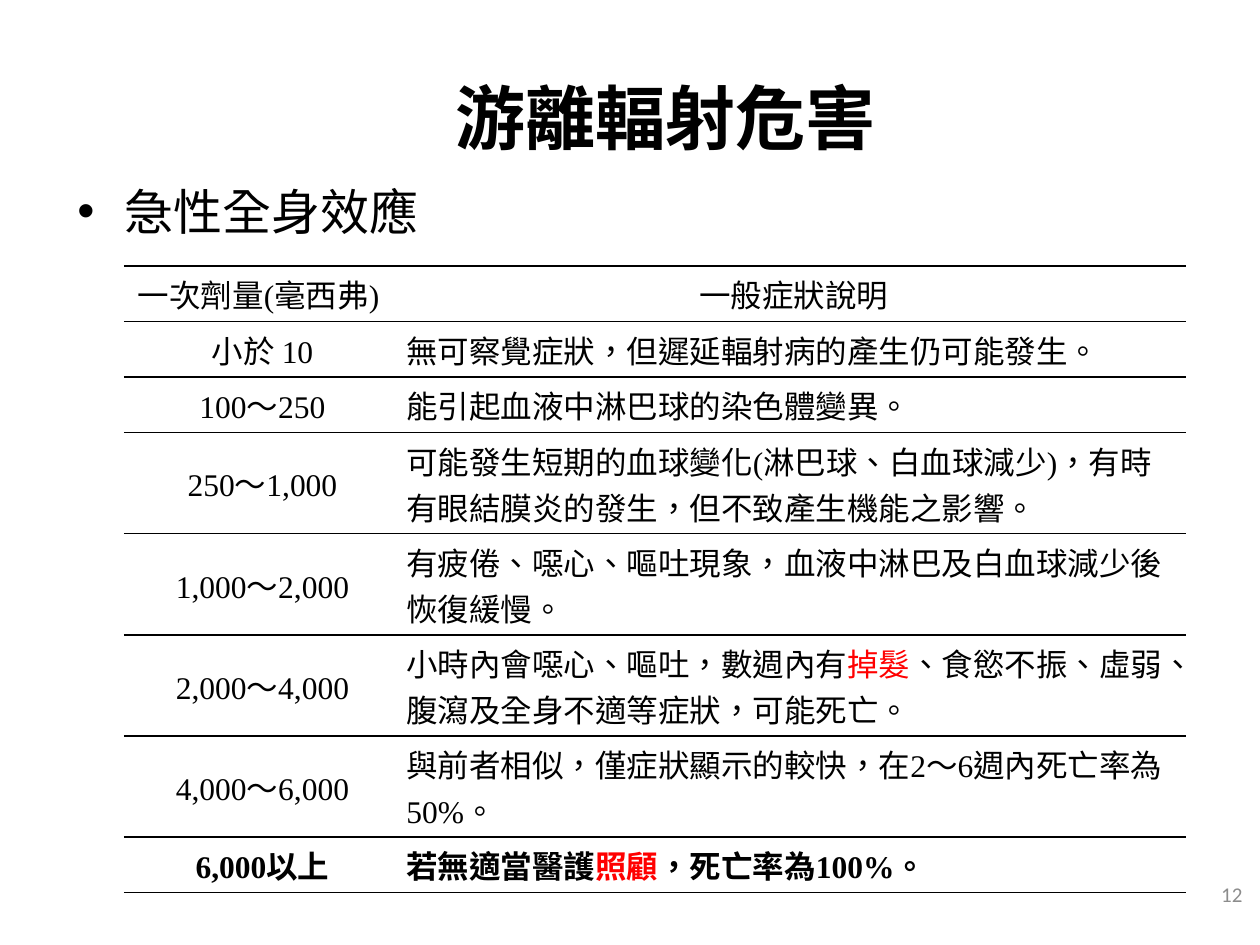
from lxml.etree import fromstring
from pptx import Presentation
from pptx.dml.color import RGBColor
from pptx.enum.lang import MSO_LANGUAGE_ID as LANG
from pptx.enum.text import MSO_ANCHOR as ANCHOR, PP_ALIGN as ALIGN
from pptx.util import Pt

NS = "http://schemas.openxmlformats.org/drawingml/2006/main"
BLACK, RED, GRAY = "000000", "FF0000", "8C8C8C"
SERIF, SANS = "Times New Roman", "Noto Sans CJK SC"

HEADER = ("一次劑量(毫西弗) ", ["一般症狀說明"])
DOSES = [
    ("小於 10", ["無可察覺症狀，但遲延輻射病的產生仍可能發生。"]),
    ("100〜250", ["能引起血液中淋巴球的染色體變異。"]),
    ("250〜1,000", ["可能發生短期的血球變化(淋巴球、白血球減少)，有時有眼結膜炎的發生，但不致產生機能之影響。"]),
    ("1,000〜2,000", ["有疲倦、噁心、嘔吐現象，血液中淋巴及白血球減少後恢復緩慢。"]),
    ("2,000〜4,000", ["小時內會噁心、嘔吐，數週內有", "掉髮", "、食慾不振、虛弱、腹瀉及全身不適等症狀，可能死亡。"]),
    ("4,000〜6,000", ["與前者相似，僅症狀顯示的較快，在2〜6週內死亡率為50%。"]),
    ("6,000以上", ["若無適當醫護", "照顧", "，死亡率為100%。"]),
]
ROW_HEIGHTS = [31.75] * 3 + [57.75] * 4 + [31.75]


def rgb(color):
    return RGBColor.from_string(color)


def set_font(font, name, size, color=BLACK, bold=False):
    font.name, font.size, font.bold = name, Pt(size), bold
    font.color.rgb = rgb(color)


def place(sp, x, y, w, h):
    sp.left, sp.top, sp.width, sp.height = Pt(x), Pt(y), Pt(w), Pt(h)


def add_chinese(p, text):
    r = p.add_run()
    r.text = text
    r.font.language_id = LANG.TRADITIONAL_CHINESE
    return r


def add_title(sp, text, box):
    place(sp, *box)
    tf = sp.text_frame
    tf.vertical_anchor = ANCHOR.MIDDLE
    p = tf.paragraphs[0]
    p.alignment = ALIGN.CENTER
    set_font(p.font, SANS, 40, bold=True)
    add_chinese(p, text)


def add_body(sp, text, box):
    place(sp, *box)
    p = sp.text_frame.paragraphs[0]
    set_font(p.font, SERIF, 28)
    add_chinese(p, text)


def set_borders(cell):
    line = f'<a:solidFill><a:srgbClr val="{BLACK}"/></a:solidFill>'
    sides = [("L", "<a:noFill/>"), ("R", "<a:noFill/>"), ("T", line), ("B", line)]
    tc_pr = cell._tc.get_or_add_tcPr()
    for i, (side, fill) in enumerate(sides):
        tc_pr.insert(i, fromstring(f'<a:ln{side} xmlns:a="{NS}" w="{Pt(1)}">{fill}</a:ln{side}>'))


def fill_cell(cell, parts, alignment, bold):
    cell.fill.background()
    set_borders(cell)
    cell.vertical_anchor = ANCHOR.MIDDLE
    cell.margin_left = cell.margin_right = cell.margin_top = cell.margin_bottom = Pt(3)
    p = cell.text_frame.paragraphs[0]
    p.alignment = alignment
    p.space_after = Pt(6)
    set_font(p.font, SERIF, 18, bold=bold)
    for i, text in enumerate(parts):
        r = add_chinese(p, text)
        if i == 1:
            r.font.color.rgb = rgb(RED)


def add_dose_table(slide, box):
    x, y, w, h = box
    rows = [HEADER] + DOSES
    table = slide.shapes.add_table(len(rows), 2, Pt(x), Pt(y), Pt(w), Pt(h)).table
    table.first_row = table.horz_banding = False
    dose_w = 158.5
    for column, width in zip(table.columns, (dose_w, w - dose_w)):
        column.width = Pt(width)
    for i, (dose, symptoms) in enumerate(rows):
        table.rows[i].height = Pt(ROW_HEIGHTS[i])
        bold = i == len(rows) - 1
        fill_cell(table.cell(i, 0), [dose], ALIGN.CENTER, bold)
        fill_cell(table.cell(i, 1), symptoms, ALIGN.LEFT if i else ALIGN.CENTER, bold)


def add_page_number(slide, number, box):
    tf = slide.shapes.add_textbox(*map(Pt, box)).text_frame
    tf.word_wrap = True
    tf.vertical_anchor = ANCHOR.MIDDLE
    p = tf.paragraphs[0]
    p.text = number
    p.alignment = ALIGN.RIGHT
    set_font(p.font, "Calibri", 12, GRAY)


def main():
    prs = Presentation()
    prs.slide_width, prs.slide_height = Pt(720), Pt(540)
    slide = prs.slides.add_slide(prs.slide_layouts[1])
    add_title(slide.shapes.title, "游離輻射危害", (76.5, 21.5, 607.5, 90))
    add_body(slide.placeholders[1], "急性全身效應", (37, 100, 648, 356.5))
    add_page_number(slide, "12", (549, 496.5, 168, 28.75))
    add_dose_table(slide, (70.75, 152, 607, sum(ROW_HEIGHTS)))
    prs.save("out.pptx")


if __name__ == "__main__":
    main()
